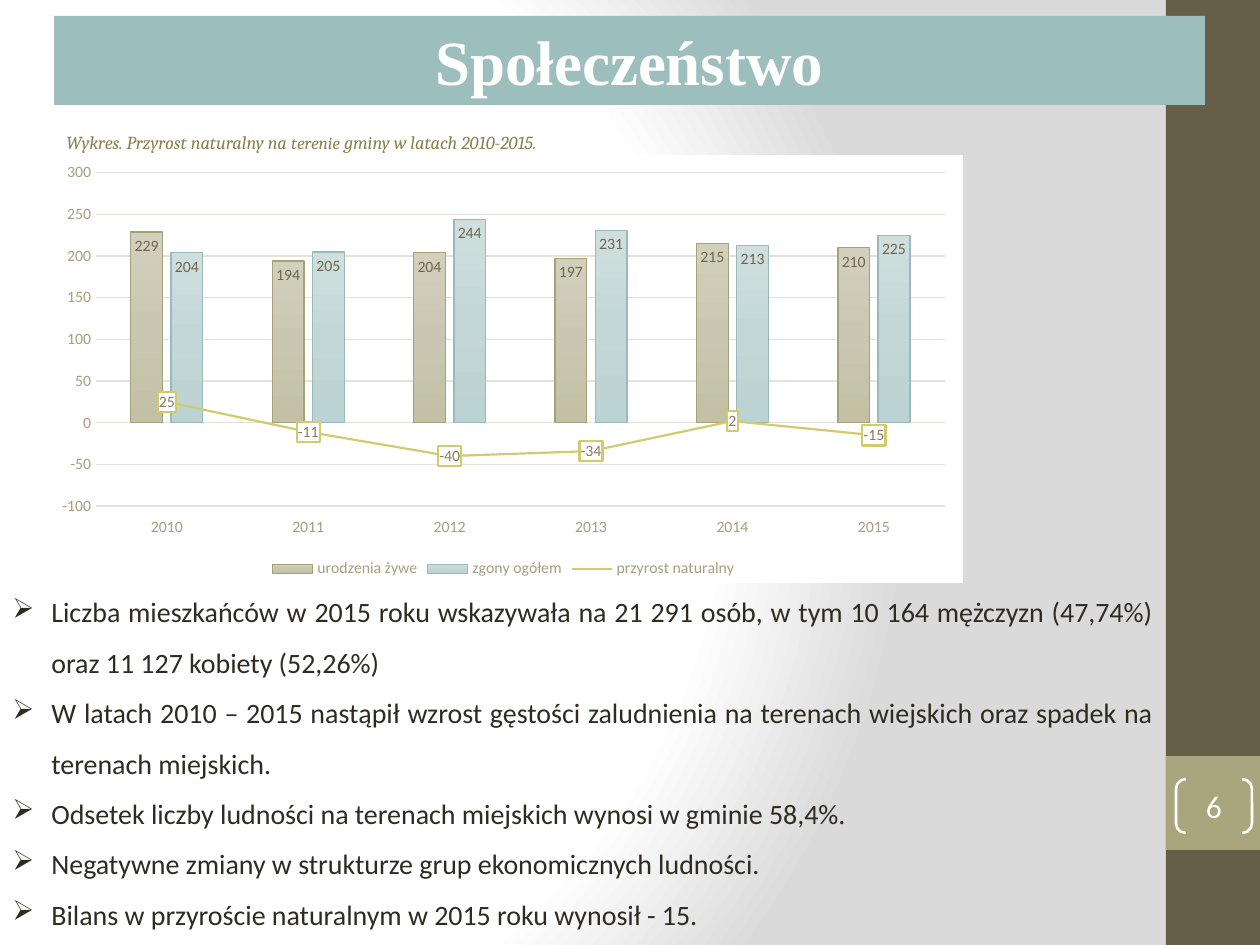
from lxml import etree
from pptx import Presentation
from pptx.chart.data import CategoryChartData
from pptx.dml.color import RGBColor
from pptx.enum.chart import (XL_CHART_TYPE, XL_LABEL_POSITION, XL_LEGEND_POSITION,
                             XL_MARKER_STYLE, XL_TICK_LABEL_POSITION, XL_TICK_MARK)
from pptx.enum.shapes import MSO_SHAPE
from pptx.enum.text import MSO_ANCHOR, PP_ALIGN
from pptx.oxml import parse_xml
from pptx.oxml.ns import nsdecls, qn
from pptx.util import Emu, Pt

COLUMNS, LEGEND_BOTTOM = XL_CHART_TYPE.COLUMN_CLUSTERED, XL_LEGEND_POSITION.BOTTOM
INSIDE_END, CENTER_LABEL = XL_LABEL_POSITION.INSIDE_END, XL_LABEL_POSITION.CENTER
NO_MARKER, NO_TICK = XL_MARKER_STYLE.NONE, XL_TICK_MARK.NONE
LABELS_LOW = XL_TICK_LABEL_POSITION.LOW
RECTANGLE, BRACKETS = MSO_SHAPE.RECTANGLE, MSO_SHAPE.DOUBLE_BRACKET
TOP, MIDDLE = MSO_ANCHOR.TOP, MSO_ANCHOR.MIDDLE
CENTER, JUSTIFY = PP_ALIGN.CENTER, PP_ALIGN.JUSTIFY
PX = 914400 / 126


class Theme:
    """Colours, fonts and type sizes of the slide."""
    white, band, page, title = "FFFFFF", "675E47", "A9A57C", "9CBEBD"
    text, caption, axis, grid = "2F2B20", "89814E", "A89D7F", "E5E2D9"
    bar_label, line_label, growth = "6F664C", "897D5D", "D2CB6C"
    backdrop = ((0, "FFFFFF"), (75, "FFFFFF"), (100, "DADADA"))
    births = ((0, "D2D0BD"), (50, "C9C7B1"), (100, "C3C0A5"))
    deaths = ((0, "CFDFDE"), (50, "C3D7D6"), (100, "BBD3D2"))
    births_edge, deaths_edge = "A5A179", "99BAB9"
    body_font, caption_font, title_font = "Calibri", "Cambria", "Times New Roman"
    title_size, page_size, body_size = 36, 18, 16
    caption_size, caption_small, chart_size, label_size = 10.5, 10, 10, 9


YEARS = ["2010", "2011", "2012", "2013", "2014", "2015"]
CHANGES = {"urodzenia żywe": (229, 194, 204, 197, 215, 210),
           "zgony ogółem": (204, 205, 244, 231, 213, 225),
           "przyrost naturalny": (25, -11, -40, -34, 2, -15)}
CAPTION = [("Wykres. Przyrost naturalny na ", Theme.caption_size),
           ("terenie", Theme.caption_small),
           (" gminy w latach 2010-2015.", Theme.caption_size)]
FACTS = [
    "Liczba mieszkańców w 2015 roku wskazywała na 21 291 osób, w tym 10 164 mężczyzn (47,74%) "
    "oraz 11 127 kobiety (52,26%)",
    "W latach 2010 – 2015 nastąpił wzrost gęstości zaludnienia na terenach wiejskich oraz spadek "
    "na terenach miejskich.",
    "Odsetek liczby ludności na terenach miejskich wynosi w gminie 58,4%.",
    "Negatywne zmiany w strukturze grup ekonomicznych ludności.",
    "Bilans w przyroście naturalnym w 2015 roku wynosił - 15."]


def emu(*lengths):
    """Turn px lengths into EMU."""
    return [Emu(round(length * PX)) for length in lengths]


def style_font(font, size, color, name=Theme.body_font):
    """Set size, colour and face of a font."""
    font.size, font.name, font.color.rgb = Pt(size), name, RGBColor.from_string(color)


def style_line(line, color, width):
    """Set colour and width of a line."""
    line.color.rgb, line.width = RGBColor.from_string(color), Pt(width)


def add_run(paragraph, text, size, color, name=Theme.body_font):
    """Append one styled run and return its font."""
    run = paragraph.add_run()
    run.text = text
    style_font(run.font, size, color, name)
    return run.font


def swap_gradient(properties, stops, direction):
    """Replace the solid fill of a properties element by a gradient."""
    marks = "".join(f'<a:gs pos="{place * 1000}"><a:srgbClr val="{color}"/></a:gs>'
                    for place, color in stops)
    properties.replace(properties.find(qn("a:solidFill")), parse_xml(
        f'<a:gradFill {nsdecls("a")}><a:gsLst>{marks}</a:gsLst>{direction}</a:gradFill>'))


def paint_background(slide):
    """Fill the slide with a radial gradient."""
    slide.background.fill.solid()
    swap_gradient(slide._element.find(".//" + qn("p:bgPr")), Theme.backdrop,
                  '<a:path path="circle"><a:fillToRect l="20000" t="50000" '
                  'r="100000" b="50000"/></a:path>')


def add_panel(slide, box, color):
    """Add a plain filled rectangle."""
    shape = slide.shapes.add_shape(RECTANGLE, *emu(*box))
    shape.shadow.inherit = False
    shape.fill.solid()
    shape.fill.fore_color.rgb = RGBColor.from_string(color)
    shape.line.fill.background()
    return shape


def add_sidebar(slide, box, number):
    """Add the side band with its bracketed page number."""
    left, top, width, height = box
    add_panel(slide, box, Theme.band)
    add_panel(slide, (left, top + height * 4 // 5, width, width), Theme.page)
    shape = slide.shapes.add_shape(BRACKETS, *emu(left + 10, top + 779, 76, 54))
    shape.adjustments[0] = 0.18
    shape.shadow.inherit = False
    shape.fill.background()
    style_line(shape.line, Theme.white, 1.5)
    frame = shape.text_frame
    frame.margin_left = frame.margin_top = frame.margin_right = frame.margin_bottom = 0
    frame.paragraphs[0].alignment = CENTER
    add_run(frame.paragraphs[0], number, Theme.page_size, Theme.white)


def add_title(slide, box, text):
    """Add the title banner."""
    frame = add_panel(slide, box, Theme.title).text_frame
    frame.vertical_anchor, frame.paragraphs[0].alignment = TOP, CENTER
    add_run(frame.paragraphs[0], text, Theme.title_size, Theme.white, Theme.title_font).bold = True


def add_caption(slide, box, parts):
    """Add the italic chart caption from (text, size) parts."""
    frame = slide.shapes.add_textbox(*emu(*box)).text_frame
    frame.word_wrap, frame.vertical_anchor = True, MIDDLE
    for text, size in parts:
        add_run(frame.paragraphs[0], text, size, Theme.caption, Theme.caption_font).italic = True


def add_facts(slide, box, facts):
    """Add the justified list with arrow bullets."""
    frame = slide.shapes.add_textbox(*emu(*box)).text_frame
    frame.word_wrap = True
    indent = emu(39)[0]
    for index, fact in enumerate(facts):
        paragraph = frame.add_paragraph() if index else frame.paragraphs[0]
        paragraph.alignment, paragraph.line_spacing = JUSTIFY, 1.5
        properties = paragraph._p.get_or_add_pPr()
        properties.set("marL", str(indent))
        properties.set("indent", str(-indent))
        etree.SubElement(properties, qn("a:buChar")).set("char", "➢")
        add_run(paragraph, fact, Theme.body_size, Theme.text)


def move_to_line(chart):
    """Move the last column series into a line plot on the same axes."""
    columns = chart.plots[0]._element
    series = columns.findall(qn("c:ser"))[-1]
    for flag in series.findall(qn("c:invertIfNegative")):
        series.remove(flag)
    line = parse_xml(f'<c:lineChart {nsdecls("c")}><c:grouping val="standard"/>'
                     '<c:varyColors val="0"/><c:marker val="1"/></c:lineChart>')
    line.insert(2, series)
    for axis in columns.findall(qn("c:axId")):
        etree.SubElement(line, qn("c:axId")).set("val", axis.get("val"))
    columns.addnext(line)
    return chart.plots[1].series[0]


def fill_behind(element, outline):
    """Give a chart part a white fill and the given outline."""
    element.find(qn("c:txPr")).addprevious(parse_xml(
        f'<c:spPr {nsdecls("c", "a")}><a:solidFill><a:srgbClr val="{Theme.white}"/>'
        f'</a:solidFill><a:ln w="15875">{outline}</a:ln></c:spPr>'))


def label_values(series, color, position):
    """Show the values of a series and return its labels."""
    labels = series.data_labels
    labels.show_value, labels.position = True, position
    style_font(labels.font, Theme.label_size, color)
    return labels


def style_axes(categories, values):
    """Style both axes and the grid."""
    for axis in (categories, values):
        axis.major_tick_mark = axis.minor_tick_mark = NO_TICK
        style_font(axis.tick_labels.font, Theme.label_size, Theme.axis)
    categories.tick_label_position = LABELS_LOW
    values.minimum_scale, values.maximum_scale, values.major_unit = -100, 300, 50
    values.format.line.fill.background()
    for part in (categories, values.major_gridlines):
        style_line(part.format.line, Theme.grid, 0.75)


def add_growth_chart(slide, box):
    """Add the columns of births and deaths with the line of natural growth."""
    data = CategoryChartData()
    data.categories = YEARS
    for name, values in CHANGES.items():
        data.add_series(name, values)
    chart = slide.shapes.add_chart(COLUMNS, *emu(*box), data).chart
    chart.has_title, chart.has_legend = False, True
    style_font(chart.font, Theme.chart_size, Theme.text)
    fill_behind(chart._chartSpace, "<a:noFill/>")
    growth, plot = move_to_line(chart), chart.plots[0]
    plot.vary_by_categories, plot.gap_width, plot.overlap = False, 219, -27
    looks = ((Theme.births, Theme.births_edge), (Theme.deaths, Theme.deaths_edge))
    for series, (stops, edge) in zip(plot.series, looks):
        series.format.fill.solid()
        swap_gradient(series._element.get_or_add_spPr(), stops, '<a:lin ang="5400000"/>')
        style_line(series.format.line, edge, 0.75)
        label_values(series, Theme.bar_label, INSIDE_END)
    growth.smooth, growth.marker.style = False, NO_MARKER
    style_line(growth.format.line, Theme.growth, 1.25)
    fill_behind(label_values(growth, Theme.line_label, CENTER_LABEL)._element,
                f'<a:solidFill><a:srgbClr val="{Theme.growth}"/></a:solidFill>')
    style_axes(chart.category_axis, chart.value_axis)
    chart.legend.position, chart.legend.include_in_layout = LEGEND_BOTTOM, False
    style_font(chart.legend.font, Theme.label_size, Theme.axis)


def main():
    """Build and save the slide."""
    presentation = Presentation()
    presentation.slide_width, presentation.slide_height = emu(1260, 945)
    slide = presentation.slides.add_slide(presentation.slide_layouts[6])
    paint_background(slide)
    add_sidebar(slide, (1166, 0, 94, 945), "6")
    add_facts(slide, (0, 572, 1166, 407), FACTS)
    add_caption(slide, (54, 125, 586, 35), CAPTION)
    add_title(slide, (54, 16, 1151, 89), "Społeczeństwo")
    add_growth_chart(slide, (44, 155, 919, 428))
    presentation.save("out.pptx")


if __name__ == "__main__":
    main()
